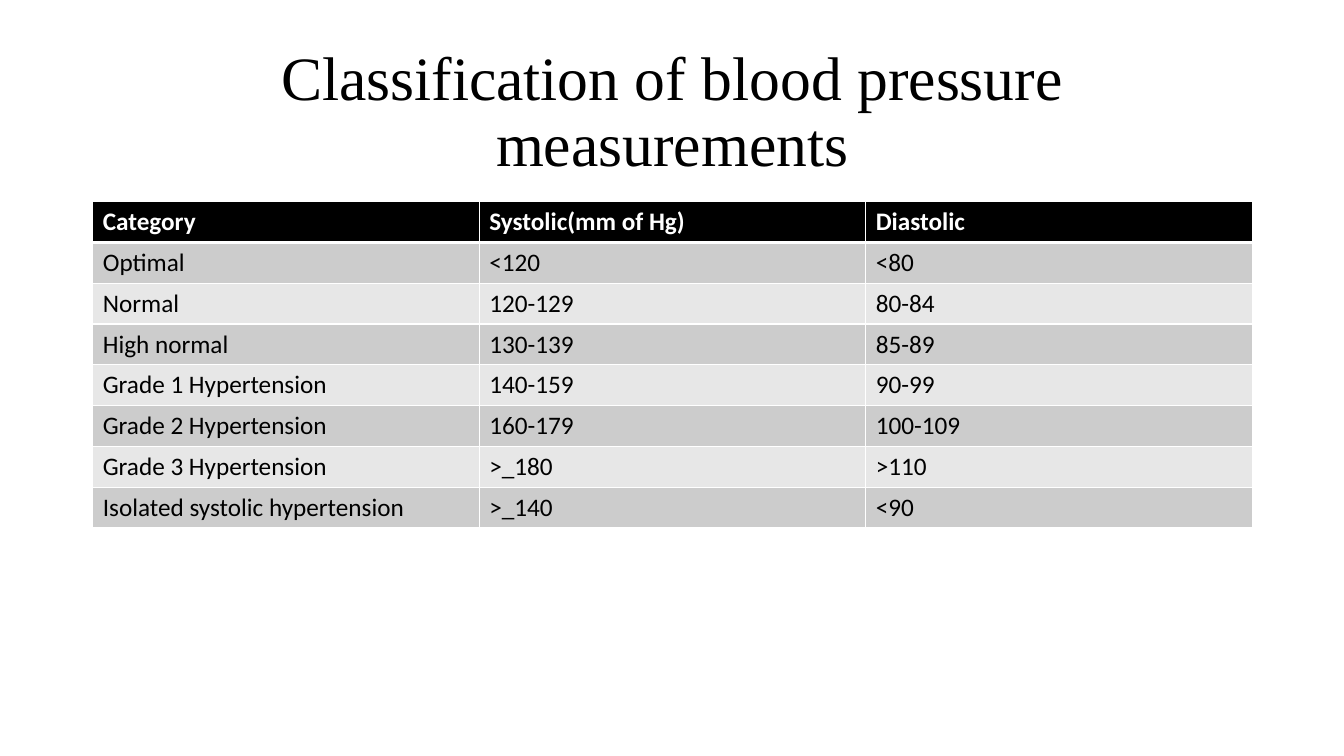
from dataclasses import dataclass

import pptx
import pptx.dml.color
import pptx.enum.text
import pptx.oxml
import pptx.oxml.ns
import pptx.presentation
import pptx.slide
import pptx.table
import pptx.text.text
import pptx.util

Inches = pptx.util.Inches
Align = pptx.enum.text.PP_ALIGN


@dataclass(frozen=True)
class Theme:
    black: str = "000000"
    white: str = "FFFFFF"
    dark: str = "CCCCCC"
    light: str = "E7E7E7"
    serif: str = "Times New Roman"
    sans: str = "Calibri"
    title: int = 44
    body: int = 18
    thin: int = 1
    thick: int = 3


@dataclass(frozen=True)
class Level:
    name: str
    upper: str
    lower: str


THEME = Theme()
LEFT, WIDTH = Inches(0.92), Inches(11.5)
TITLE = "Classification of blood pressure measurements"
LEVELS = [
    Level("Category", "Systolic(mm of Hg)", "Diastolic"),
    Level("Optimal", "<120 ", "<80"),
    Level("Normal", "120-129", "80-84"),
    Level("High normal", "130-139", "85-89"),
    Level("Grade 1 Hypertension", "140-159", "90-99"),
    Level("Grade 2 Hypertension", "160-179", "100-109"),
    Level("Grade 3 Hypertension", ">_180", ">110"),
    Level("Isolated systolic hypertension", ">_140", "<90"),
]


def color(code: str) -> pptx.dml.color.RGBColor:
    return pptx.dml.color.RGBColor.from_string(code)


def style(line: pptx.text.text._Paragraph, face: str, size: int,
          ink: str, bold: bool, align: Align) -> None:
    line.alignment = align
    line.font.name = face
    line.font.size = pptx.util.Pt(size)
    line.font.bold = bold
    line.font.color.rgb = color(ink)


def add_title(slide: pptx.slide.Slide) -> None:
    box = slide.shapes.add_textbox(LEFT, Inches(0.4), WIDTH, Inches(1.45))
    frame = box.text_frame
    frame.word_wrap = True
    frame.vertical_anchor = pptx.enum.text.MSO_ANCHOR.MIDDLE
    line = frame.paragraphs[0]
    line.text = TITLE
    line.line_spacing = 0.9
    style(line, THEME.serif, THEME.title, THEME.black, False, Align.CENTER)


def add_edges(cell: pptx.table._Cell, top: int, base: int) -> None:
    props = cell._tc.get_or_add_tcPr()
    sides = {"L": THEME.thin, "R": THEME.thin, "T": top, "B": base}
    for side, width in sides.items():
        props.append(pptx.oxml.parse_xml(
            f'<a:ln{side} {pptx.oxml.ns.nsdecls("a")} w="{pptx.util.Pt(width)}">'
            f'<a:solidFill><a:srgbClr val="{THEME.white}"/></a:solidFill>'
            f'</a:ln{side}>'))


def fill_row(table: pptx.table.Table, row: int, level: Level) -> None:
    head = row == 0
    back = THEME.black if head else THEME.dark if row % 2 else THEME.light
    ink = THEME.white if head else THEME.black
    top = THEME.thick if row == 1 else THEME.thin
    base = THEME.thick if head else THEME.thin
    for col, text in enumerate((level.name, level.upper, level.lower)):
        cell = table.cell(row, col)
        add_edges(cell, top, base)
        cell.fill.solid()
        cell.fill.fore_color.rgb = color(back)
        cell.text = text
        line = cell.text_frame.paragraphs[0]
        style(line, THEME.sans, THEME.body, ink, head, Align.JUSTIFY)


def add_levels(slide: pptx.slide.Slide) -> None:
    table = slide.shapes.add_table(
        len(LEVELS), 3, LEFT, Inches(2), WIDTH, Inches(3.24)).table
    for row, level in enumerate(LEVELS):
        fill_row(table, row, level)


def main() -> None:
    deck = pptx.Presentation()
    deck.slide_width, deck.slide_height = Inches(13.33), Inches(7.5)
    slide = deck.slides.add_slide(deck.slide_layouts[6])
    add_title(slide)
    add_levels(slide)
    deck.save("out.pptx")


if __name__ == "__main__":
    main()
